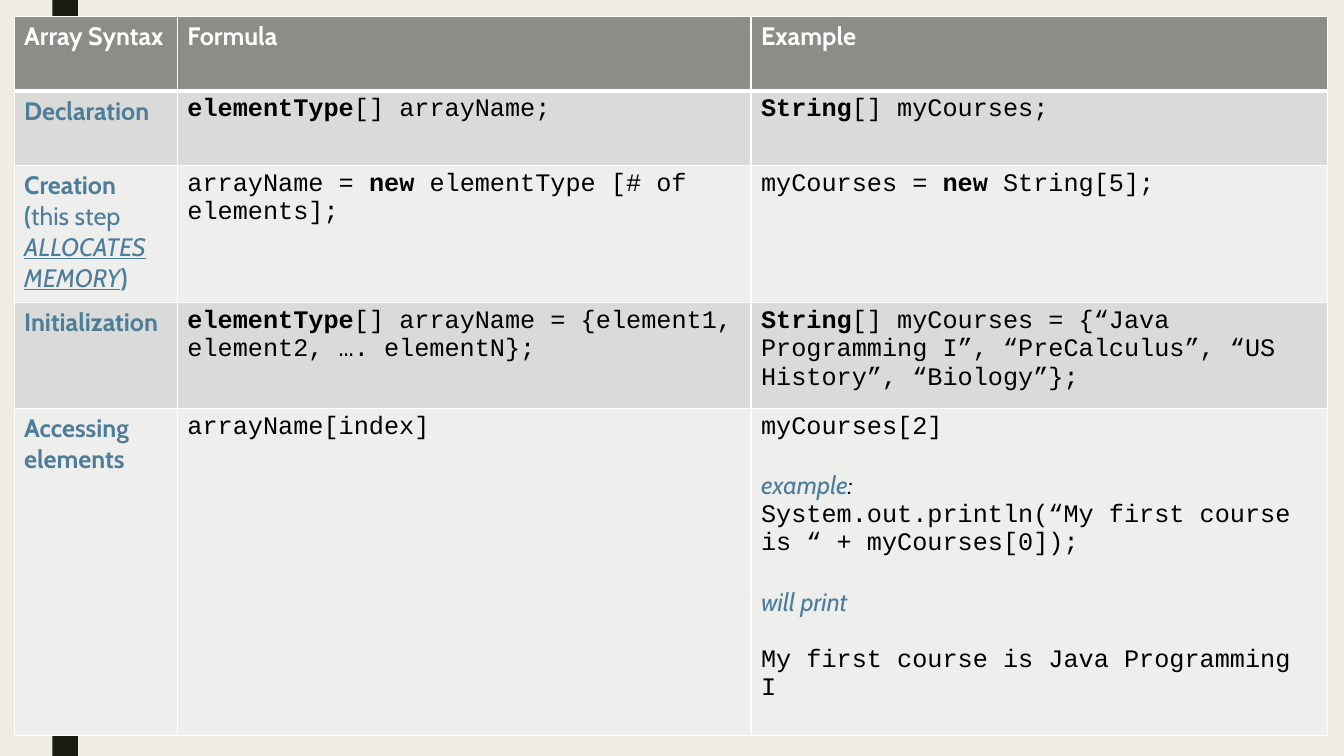
from dataclasses import dataclass

from lxml.etree import SubElement
from pptx import Presentation
from pptx.dml.color import RGBColor
from pptx.enum.shapes import MSO_SHAPE
from pptx.oxml.ns import qn
from pptx.util import Inches, Pt

WIDTH, HEIGHT = Inches(13.33), Inches(7.5)
WHITE, BLACK, BLUE = "FFFFFF", "000000", "4D7D99"
HEADER_FILL, BAND_FILLS = "8C8D86", ("DADBD9", "EEEEED")
# Shares of the slide's size, in percent
COLUMN_SHARES = (12.15, 42.68, 42.91)
ROW_SHARES = (9.87, 9.87, 18.13, 14, 43.33)
BLANK_LINE = 20.4


@dataclass(frozen=True)
class Span:
    text: str
    bold: bool = False
    italic: bool = False
    underline: bool = False
    color: str | None = None


@dataclass(frozen=True)
class Line:
    spans: tuple[Span, ...]
    font: str
    color: str
    before: float = 0


def code(*spans: str | Span, before: float = 0) -> Line:
    """A line of code; plain strings are regular text."""
    parts = tuple(Span(s) if isinstance(s, str) else s for s in spans)
    return Line(parts, "Courier New", BLACK, before)


def label(*spans: Span, color: str = BLUE, before: float = 0) -> Line:
    return Line(spans, "Cabin", color, before)


def bold(text: str) -> Span:
    return Span(text, bold=True)


def italic(text: str, color: str | None = None) -> Span:
    return Span(text, italic=True, color=color)


ROWS: list[list[list[Line]]] = [
    [[label(bold(title), color=WHITE)] for title in ("Array Syntax", "Formula", "Example")],
    [
        [label(bold("Declaration"))],
        [code(bold("elementType"), "[] arrayName;")],
        [code(bold("String"), "[] myCourses;")],
    ],
    [
        [
            label(bold("Creation")),
            label(bold("("), Span("this step "),
                  Span("ALLOCATES MEMORY", italic=True, underline=True), bold(")")),
        ],
        [code("arrayName = ", bold("new "), "elementType [# of elements];")],
        [code("myCourses = ", bold("new"), " String[5];")],
    ],
    [
        [label(bold("Initialization"))],
        [code(bold("elementType"), "[] arrayName = {element1, element2, …. elementN};")],
        [code(bold("String"), "[] myCourses = {“Java Programming I”, “PreCalculus”, "
              "“US History”, “Biology”};")],
    ],
    [
        [label(bold("Accessing elements"))],
        [code("arrayName[index]")],
        [
            code("myCourses[2]"),
            label(italic("example"), italic(":", BLACK), before=BLANK_LINE),
            code("System.out.println(“My first course is “ + myCourses[0]);"),
            label(italic("will print"), before=BLANK_LINE),
            code("My first course is Java Programming I", before=BLANK_LINE),
        ],
    ],
]


def rgb(value: str) -> RGBColor:
    return RGBColor.from_string(value)


def across(percent: float) -> int:
    return round(WIDTH * percent / 100)


def down(percent: float) -> int:
    return round(HEIGHT * percent / 100)


def set_borders(cell, top: float, bottom: float) -> None:
    properties = cell._tc.get_or_add_tcPr()
    for side, points in (("L", 1), ("R", 1), ("T", top), ("B", bottom)):
        border = SubElement(properties, qn(f"a:ln{side}"), w=str(Pt(points)))
        fill = SubElement(border, qn("a:solidFill"))
        SubElement(fill, qn("a:srgbClr"), val=WHITE)


def write_lines(frame, lines: list[Line]) -> None:
    for index, line in enumerate(lines):
        para = frame.paragraphs[0] if index == 0 else frame.add_paragraph()
        if line.before:
            para.space_before = Pt(line.before)
        para.font.size = Pt(18)
        para.font.name = line.font
        para.font.color.rgb = rgb(line.color)
        for span in line.spans:
            run = para.add_run()
            run.text = span.text
            run.font.bold = span.bold
            run.font.italic = span.italic
            run.font.underline = span.underline
            if span.color:
                run.font.color.rgb = rgb(span.color)


def add_side_bar(page) -> None:
    bar = page.shapes.add_shape(MSO_SHAPE.RECTANGLE, across(3.9), 0, across(1.9), HEIGHT)
    bar.shadow.inherit = False
    bar.fill.solid()
    bar.fill.fore_color.rgb = rgb("191B0E")
    bar.line.fill.background()


def add_syntax_table(page) -> None:
    table = page.shapes.add_table(
        len(ROW_SHARES), len(COLUMN_SHARES), across(1.05), down(2.13),
        across(sum(COLUMN_SHARES)), down(sum(ROW_SHARES))).table
    for column, share in zip(table.columns, COLUMN_SHARES):
        column.width = across(share)
    for number, (row, share, texts) in enumerate(zip(table.rows, ROW_SHARES, ROWS)):
        row.height = down(share)
        shade = BAND_FILLS[(number - 1) % 2] if number else HEADER_FILL
        for cell, lines in zip(row.cells, texts):
            # The rule below the header is heavier
            set_borders(cell, top=3 if number == 1 else 1, bottom=1 if number else 3)
            cell.fill.solid()
            cell.fill.fore_color.rgb = rgb(shade)
            write_lines(cell.text_frame, lines)


def main() -> None:
    deck = Presentation()
    deck.slide_width, deck.slide_height = WIDTH, HEIGHT
    page = deck.slides.add_slide(deck.slide_layouts[6])
    # Background and side bar
    page.background.fill.solid()
    page.background.fill.fore_color.rgb = rgb("EFEDE3")
    add_side_bar(page)
    # Table of array syntax
    add_syntax_table(page)
    deck.save("out.pptx")


if __name__ == "__main__":
    main()
